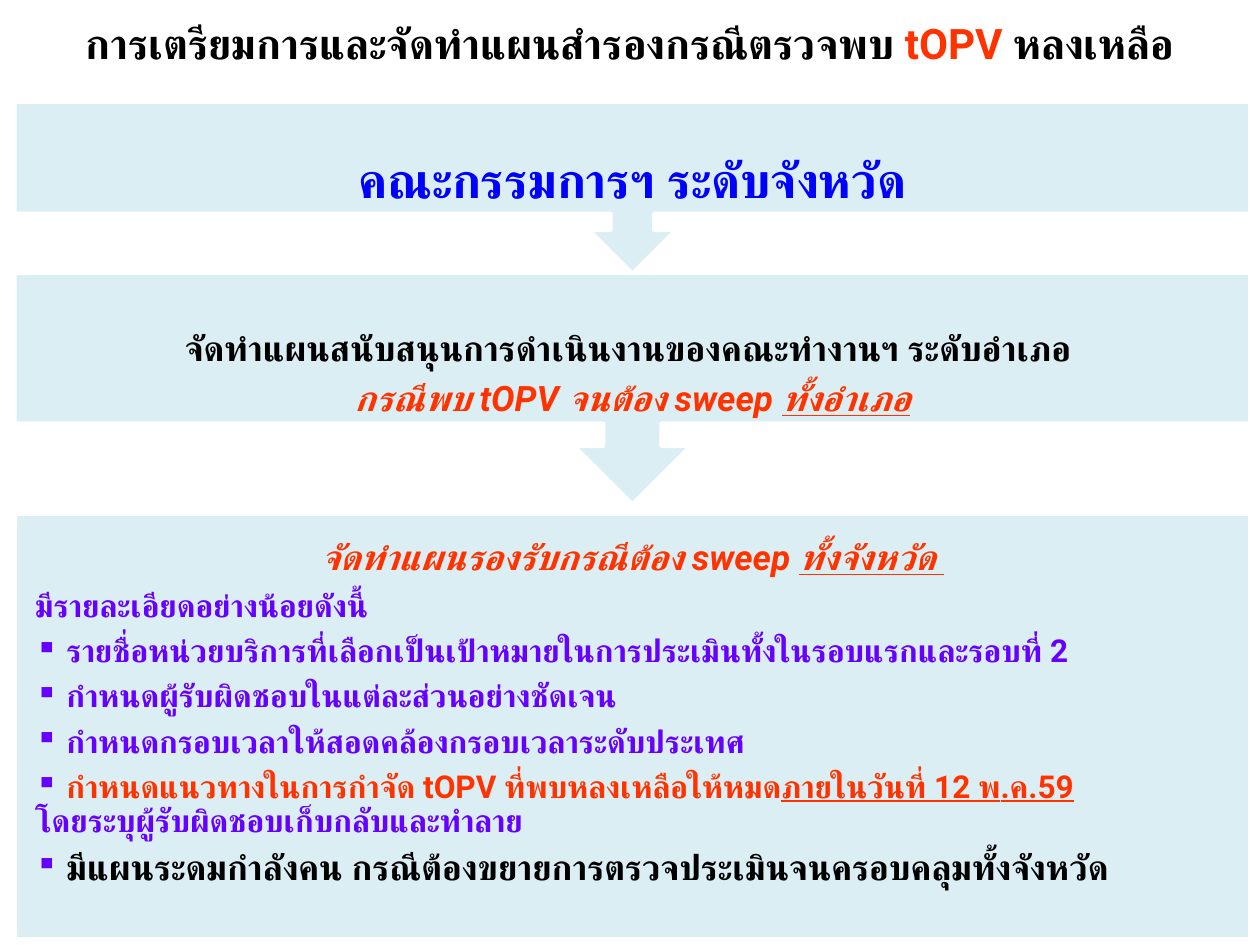
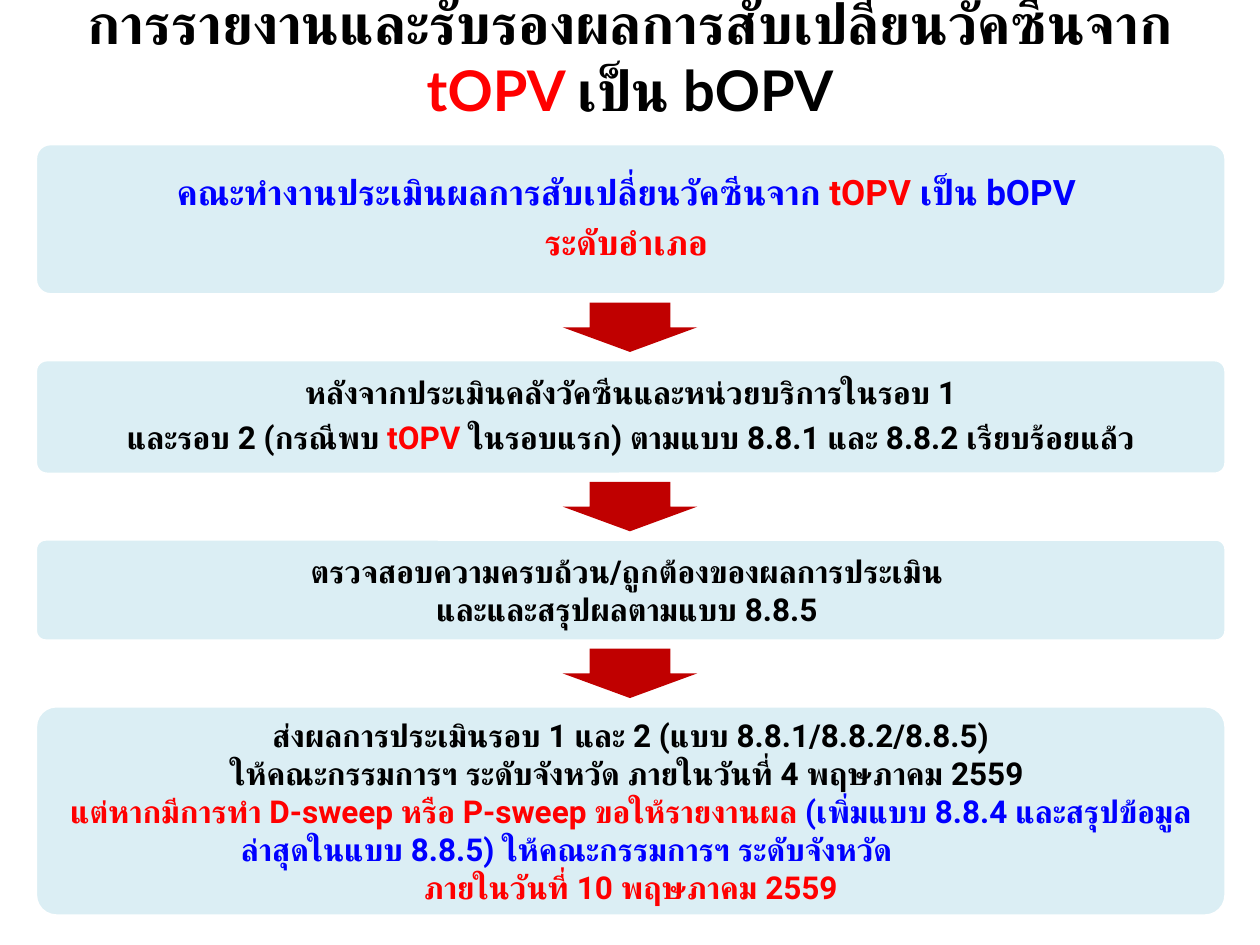
from pptx import Presentation
from pptx.dml.color import RGBColor
from pptx.enum.shapes import MSO_SHAPE
from pptx.enum.text import MSO_ANCHOR, MSO_AUTO_SIZE, PP_ALIGN
from pptx.util import Pt
from lxml.etree import SubElement
from pptx.oxml.ns import qn

BLACK, BLUE, PURPLE = "000000", "0000FF", "6600FF"
ORANGE, RED, DARK_RED = "FF3300", "FF0000", "C00000"
PALE_BLUE, WHITE = "DBEEF4", "FFFFFF"
CENTER, LEFT = PP_ALIGN.CENTER, PP_ALIGN.LEFT
BULLET = "▪"


def write_text(frame, lines, size, font="Roboto", inset=(7.2, 3.6, 7.2, 3.6), tight=False):
    frame.word_wrap = True
    frame.auto_size = MSO_AUTO_SIZE.NONE
    frame.vertical_anchor = MSO_ANCHOR.MIDDLE
    frame.margin_left, frame.margin_top, frame.margin_right, frame.margin_bottom = map(Pt, inset)
    for index, (align, lead, spans) in enumerate(lines):
        para = frame.paragraphs[0] if index == 0 else frame.add_paragraph()
        para.alignment = align
        para_size = max(span[3] if len(span) > 3 else size for span in spans)
        if tight:
            para.line_spacing = 0.9
            para.space_after = Pt(round(0.35 * para_size, 1))
        properties = para._p.get_or_add_pPr()
        if lead == BULLET:
            SubElement(properties, qn("a:buChar")).set("char", BULLET)
        elif lead:
            properties.set("marL", str(Pt(lead)))
        for text, colour, style, *own_size in spans:
            if text == "\n":
                para.add_line_break()
                continue
            span = para.add_run()
            span.text = text
            span.font.size = Pt(own_size[0] if own_size else size)
            span.font.bold = True
            span.font.italic = "i" in style
            span.font.underline = "u" in style
            span.font.color.rgb = RGBColor.from_string(colour)
            span.font.name = font
            SubElement(span._r.get_or_add_rPr(), qn("a:cs")).set("typeface", font)


def add_block(page, kind, left, top, width, height, fill, line=None):
    block = page.shapes.add_shape(kind, Pt(left), Pt(top), Pt(width), Pt(height))
    block.shadow.inherit = False
    block.fill.solid()
    block.fill.fore_color.rgb = RGBColor.from_string(fill)
    if line:
        block.line.color.rgb = RGBColor.from_string(line)
        block.line.width = Pt(2)
    else:
        block.line.fill.background()
    return block


deck = Presentation()
deck.slide_width, deck.slide_height = Pt(720), Pt(540)

titles = [
    (0, 49, 24, "Roboto", [
        ("การเตรียมการและจัดทำแผนสำรองกรณีตรวจพบ ", BLACK, ""),
        ("tOPV", ORANGE, ""),
        (" หลงเหลือ", BLACK, ""),
    ]),
    (-1.4, 66.2, 32, "Lato", [
        ("การรายงานและรับรองผลการสับเปลี่ยนวัคซีนจาก ", BLACK, ""),
        ("tOPV ", RED, ""),
        ("เป็น bOPV", BLACK, ""),
    ]),
]
pages = []
for top, height, size, font, spans in titles:
    page = deck.slides.add_slide(deck.slide_layouts[5])
    title = page.shapes.title
    title.left, title.top, title.width, title.height = Pt(0), Pt(top), Pt(720), Pt(height)
    write_text(title.text_frame, [(CENTER, 0, spans)], size, font)
    pages.append(page)
plan_page, report_page = pages

plan_left, plan_width = 8.6, 705.6
callouts = [
    (58.3, 97.9, 28, (15.8, 15.8, 15.8, 26.3), False, [
        (CENTER, 0, [("คณะกรรมการฯ ระดับจังหวัด", BLUE, "")]),
    ]),
    (156.2, 131.8, 20, (11.5, 11.5, 11.5, 26.5), True, [
        (CENTER, 0, [("จัดทำแผนสนับสนุนการดำเนินงานของคณะทำงานฯ ระดับอำเภอ ", BLACK, "")]),
        (CENTER, 0, [
            ("กรณีพบ tOPV จนต้อง sweep ", ORANGE, "i"),
            ("ทั้งอำเภอ", ORANGE, "iu"),
        ]),
    ]),
]
for top, height, size, inset, tight, lines in callouts:
    add_block(plan_page, MSO_SHAPE.DOWN_ARROW_CALLOUT, plan_left, top, plan_width, height,
              PALE_BLUE, WHITE)
    box = plan_page.shapes.add_textbox(Pt(plan_left), Pt(top), Pt(plan_width), Pt(height))
    write_text(box.text_frame, lines, size, inset=inset, tight=tight)

plan_details = [
    (CENTER, 0, [
        ("จัดทำแผนรองรับกรณีต้อง sweep ", ORANGE, "i", 20),
        ("ทั้งจังหวัด ", ORANGE, "iu", 20),
    ]),
    (LEFT, 0, [("มีรายละเอียดอย่างน้อยดังนี้", PURPLE, "")]),
    (LEFT, BULLET, [
        (" รายชื่อหน่วยบริการที่เลือกเป็นเป้าหมายในการประเมินทั้งในรอบแรกและรอบที่ 2", PURPLE, ""),
    ]),
    (LEFT, BULLET, [(" กำหนดผู้รับผิดชอบในแต่ละส่วนอย่างชัดเจน", PURPLE, "")]),
    (LEFT, BULLET, [(" กำหนดกรอบเวลาให้สอดคล้องกรอบเวลาระดับประเทศ", PURPLE, "")]),
    (LEFT, BULLET, [
        (" ", PURPLE, ""),
        ("กำหนดแนวทางในการกำจัด tOPV ที่พบหลงเหลือให้หมด", ORANGE, ""),
        ("ภายในวันที่ 12 พ.ค.59", ORANGE, "u"),
        ("\n", PURPLE, ""),
        ("โดยระบุผู้รับผิดชอบเก็บกลับและทำลาย", PURPLE, ""),
    ]),
    (LEFT, BULLET, [
        (" ", PURPLE, ""),
        ("มีแผนระดมกำลังคน กรณีต้องขยายการตรวจประเมินจนครอบคลุมทั้งจังหวัด", BLACK, "", 20),
    ]),
]
details_block = add_block(plan_page, MSO_SHAPE.RECTANGLE, plan_left, 293.8, plan_width, 242.6,
                          PALE_BLUE, WHITE)
write_text(details_block.text_frame, plan_details, 18, inset=(11.5, 11.5, 11.5, 25.5), tight=True)

report_steps = [
    (86.4, 20, True, [
        (CENTER, 0, [
            ("คณะทำงานประเมินผลการสับเปลี่ยนวัคซีนจาก ", BLUE, ""),
            ("tOPV ", RED, ""),
            ("เป็น bOPV ", BLUE, ""),
        ]),
        (CENTER, 0, [("ระดับอำเภอ ", RED, "")]),
    ]),
    (65.5, 18, True, [
        (CENTER, 0, [("หลังจากประเมินคลังวัคซีนและหน่วยบริการในรอบ 1", BLACK, "")]),
        (CENTER, 0, [
            ("และรอบ 2 (กรณีพบ ", BLACK, ""),
            ("tOPV ", RED, ""),
            ("ในรอบแรก) ตามแบบ 8.8.1 และ 8.8.2 เรียบร้อยแล้ว", BLACK, ""),
        ]),
    ]),
    (58.3, 18, False, [
        (CENTER, 0, [("ตรวจสอบความครบถ้วน/ถูกต้องของผลการประเมิน ", BLACK, "")]),
        (CENTER, 0, [("และและสรุปผลตามแบบ 8.8.5 ", BLACK, "")]),
    ]),
    (120.2, 18, False, [
        (CENTER, 0, [("ส่งผลการประเมินรอบ 1 และ 2 (แบบ 8.8.1/8.8.2/8.8.5)", BLACK, "")]),
        (CENTER, 0, [("ให้คณะกรรมการฯ ระดับจังหวัด ภายในวันที่ 4 พฤษภาคม 2559 ", BLACK, "")]),
        (CENTER, 0, [
            ("แต่หากมีการทำ D-sweep หรือ P-sweep ขอให้รายงานผล", RED, ""),
            (" (เพิ่มแบบ 8.8.4 และสรุปข้อมูล", BLUE, ""),
        ]),
        (LEFT, 109, [("ล่าสุดในแบบ 8.8.5) ให้คณะกรรมการฯ ระดับจังหวัด", BLUE, "")]),
        (CENTER, 0, [("ภายในวันที่ 10 พฤษภาคม 2559", RED, "")]),
    ]),
]
step_gap, arrow_width, arrow_height = 37, 77, 28.2
step_top = 82.1
for index, (height, size, tight, lines) in enumerate(report_steps):
    if index:
        arrow_top = step_top - (step_gap + arrow_height) / 2
        arrow = add_block(report_page, MSO_SHAPE.DOWN_ARROW, 360 - arrow_width / 2, arrow_top,
                          arrow_width, arrow_height, DARK_RED)
        arrow.adjustments[0], arrow.adjustments[1] = 0.6, 0.5
    step = add_block(report_page, MSO_SHAPE.ROUNDED_RECTANGLE, 20.2, step_top, 680.4, height,
                     PALE_BLUE, WHITE)
    step.adjustments[0] = 0.1
    write_text(step.text_frame, lines, size, inset=(5, 5, 5, 5), tight=tight)
    step_top += height + step_gap

deck.save("out.pptx")
